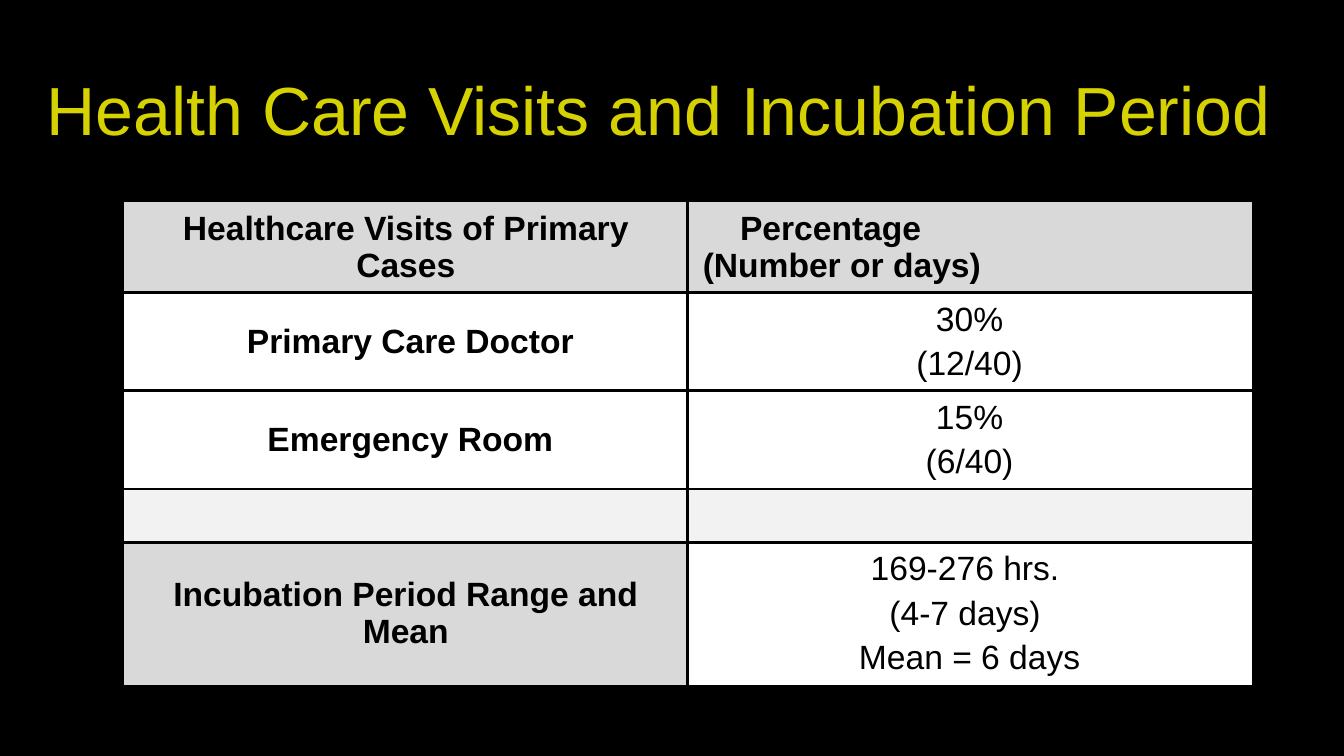
"""Build a slide with a table of health care visits and incubation period."""
from dataclasses import dataclass

import lxml.etree
import pptx
import pptx.dml.color
import pptx.enum.text
import pptx.oxml.ns
import pptx.presentation
import pptx.slide
import pptx.table
import pptx.text.text
import pptx.util

Cm = pptx.util.Cm
Pt = pptx.util.Pt
Align = pptx.enum.text.PP_ALIGN
Anchor = pptx.enum.text.MSO_ANCHOR


@dataclass(frozen=True)
class Theme:
    """Colours, font and type sizes of the slide."""
    font: str = "Arial"
    background: str = "000000"
    title: str = "D6D100"
    text: str = "000000"
    border: str = "000000"
    header: str = "D9D9D9"
    spacer: str = "F2F2F2"
    plain: str = "FFFFFF"
    title_size: float = 48.6
    cell_size: float = 24
    paragraph_gap: float = 4.8
    border_width: float = 2.25


THEME = Theme()


@dataclass(frozen=True)
class Line:
    """One paragraph of a cell, with its indents in centimetres."""
    text: str
    left: float = 0
    right: float = 0


@dataclass(frozen=True)
class Entry:
    """One table cell."""
    lines: tuple[Line, ...] = ()
    fill: str = THEME.plain
    bold: bool = False
    align: Align = Align.CENTER


@dataclass(frozen=True)
class Row:
    """One table row, with its height in centimetres."""
    height: float
    label: Entry
    value: Entry


NUDGE = 0.23
ROWS = (
    Row(2.3,
        Entry((Line("Healthcare Visits of Primary Cases"),), THEME.header, True),
        Entry((Line("Percentage", left=0.94), Line("(Number or days)")),
              THEME.header, True, Align.JUSTIFY)),
    Row(2.47,
        Entry((Line("Primary Care Doctor", left=NUDGE),), bold=True),
        Entry((Line("30%"), Line("(12/40)")))),
    Row(2.47,
        Entry((Line("Emergency Room", left=NUDGE),), bold=True),
        Entry((Line("15%"), Line("(6/40)")))),
    Row(1.35, Entry(fill=THEME.spacer), Entry(fill=THEME.spacer)),
    Row(3.58,
        Entry((Line("Incubation Period Range and Mean"),), THEME.header, True),
        Entry((Line("169-276 hrs.", right=NUDGE), Line("(4-7 days)", right=NUDGE),
               Line("Mean = 6 days")))),
)


def write(paragraph: pptx.text.text._Paragraph, text: str, *, size: float,
          color: str = THEME.text, bold: bool = False, align: Align = Align.LEFT,
          before: float = 0, left: float = 0, right: float = 0) -> None:
    """Put formatted text into a paragraph."""
    properties = paragraph._p.get_or_add_pPr()
    properties.set("marL", str(int(Cm(left))))
    properties.set("marR", str(int(Cm(right))))
    properties.set("indent", "0")
    paragraph.alignment = align
    paragraph.space_before = Pt(before)
    run = paragraph.add_run()
    run.text = text
    run.font.name = THEME.font
    run.font.size = Pt(size)
    run.font.bold = bold
    run.font.color.rgb = pptx.dml.color.RGBColor.from_string(color)


def add_borders(cell: pptx.table._Cell, sides: dict[str, bool]) -> None:
    """Draw the chosen borders of a cell and blank the others."""
    qn = pptx.oxml.ns.qn
    properties = cell._tc.get_or_add_tcPr()
    for side, visible in sides.items():
        border = lxml.etree.SubElement(
            properties, qn(f"a:{side}"), w=str(int(Pt(THEME.border_width))))
        if visible:
            fill = lxml.etree.SubElement(border, qn("a:solidFill"))
            lxml.etree.SubElement(fill, qn("a:srgbClr"), val=THEME.border)
        else:
            lxml.etree.SubElement(border, qn("a:noFill"))


def fill_cell(cell: pptx.table._Cell, entry: Entry) -> None:
    """Format a cell and write its lines."""
    cell.fill.solid()
    cell.fill.fore_color.rgb = pptx.dml.color.RGBColor.from_string(entry.fill)
    cell.vertical_anchor = Anchor.MIDDLE
    cell.margin_left = cell.margin_right = Cm(0.38)
    cell.margin_top = cell.margin_bottom = Cm(0.05)
    frame = cell.text_frame
    for index, line in enumerate(entry.lines):
        paragraph = frame.add_paragraph() if index else frame.paragraphs[0]
        gap = THEME.paragraph_gap if index and entry.align == Align.CENTER else 0
        write(paragraph, line.text, size=THEME.cell_size, bold=entry.bold,
              align=entry.align, before=gap, left=line.left, right=line.right)


def add_title(slide: pptx.slide.Slide, text: str) -> None:
    """Add the slide title."""
    box = slide.shapes.add_textbox(Cm(0.93), Cm(1.02), Cm(31.88), Cm(3.68))
    frame = box.text_frame
    frame.word_wrap = True
    frame.vertical_anchor = Anchor.MIDDLE
    write(frame.paragraphs[0], text, size=THEME.title_size, color=THEME.title)
    frame.paragraphs[0].line_spacing = 0.9


def add_visits_table(slide: pptx.slide.Slide) -> None:
    """Add the table of visits and incubation period."""
    height = sum(row.height for row in ROWS)
    table = slide.shapes.add_table(
        len(ROWS), 2, Cm(3.12), Cm(5.08), Cm(28.42), Cm(height)).table
    table.first_row = table.horz_banding = False
    for index, row in enumerate(ROWS):
        table.rows[index].height = Cm(row.height)
        for column, entry in enumerate((row.label, row.value)):
            cell = table.cell(index, column)
            add_borders(cell, {"lnL": column > 0, "lnR": column == 0,
                               "lnT": index > 0, "lnB": index < len(ROWS) - 1})
            fill_cell(cell, entry)


def main() -> None:
    """Build and save the presentation."""
    presentation = pptx.Presentation()
    presentation.slide_width = Cm(33.87)
    presentation.slide_height = Cm(19.05)
    slide = presentation.slides.add_slide(presentation.slide_layouts[6])
    slide.background.fill.solid()
    slide.background.fill.fore_color.rgb = pptx.dml.color.RGBColor.from_string(
        THEME.background)
    add_title(slide, "Health Care Visits and Incubation Period")
    add_visits_table(slide)
    presentation.save("out.pptx")


if __name__ == "__main__":
    main()
